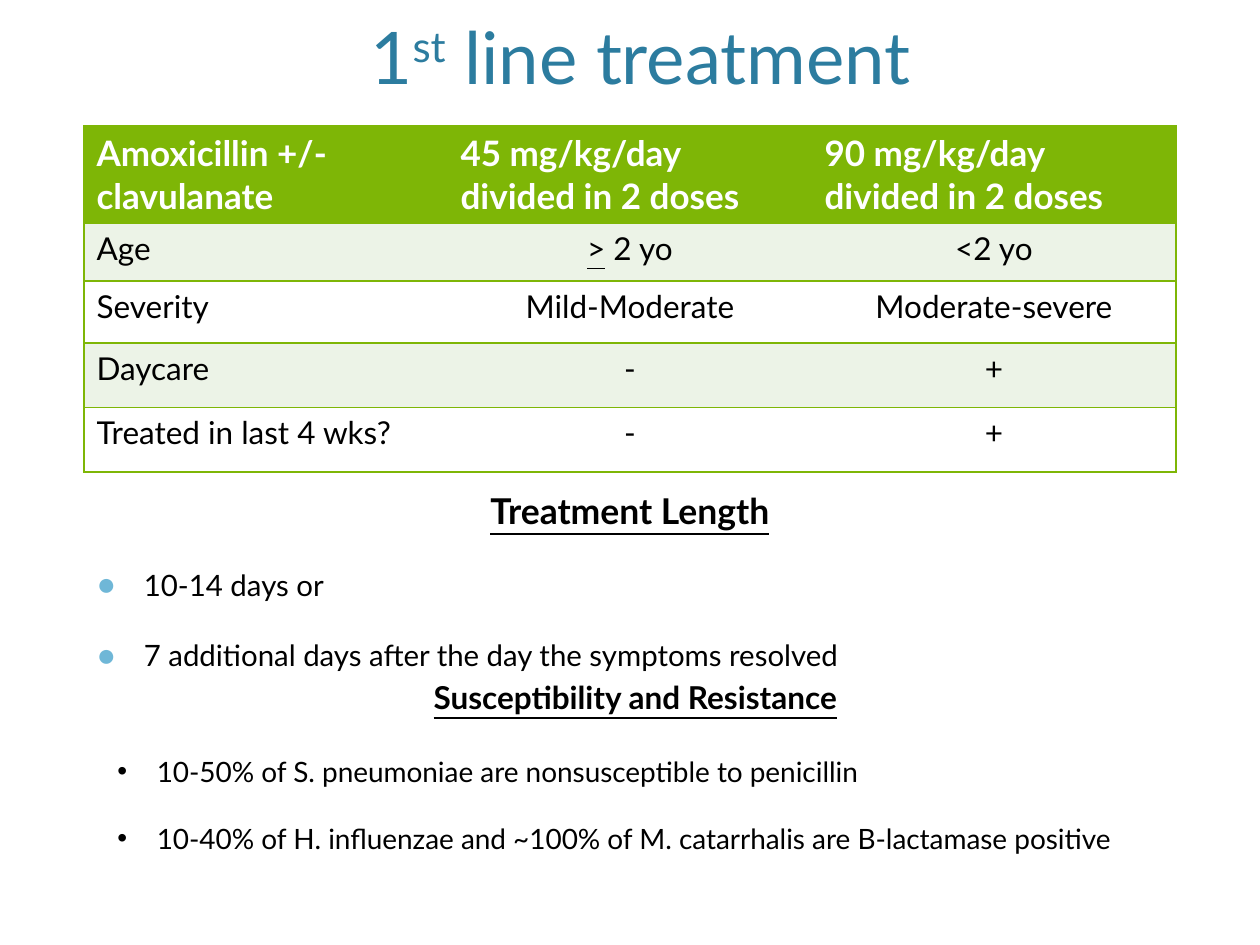
from lxml.etree import SubElement
from pptx import Presentation
from pptx.dml.color import RGBColor
from pptx.enum.text import MSO_ANCHOR, MSO_AUTO_SIZE, PP_ALIGN
from pptx.oxml.ns import qn
from pptx.util import Pt

COLORS = {
    "title": "2C7C9F",
    "text": "000000",
    "white": "FFFFFF",
    "green": "7EB606",
    "band": "ECF3E7",
    "bullet": "6FB7D7",
}
HEADERS = ["Amoxicillin +/- clavulanate", "45 mg/kg/day divided in 2 doses",
           "90 mg/kg/day divided in 2 doses"]
ROWS = [
    ["Age", "> 2 yo", "<2 yo"],
    ["Severity", "Mild-Moderate", "Moderate-severe"],
    ["Daycare", "-", "+"],
    ["Treated in last 4 wks?", "-", "+"],
]
ROW_HEIGHTS = [55.4, 33.2, 35.4, 36.8, 36.8]
COLUMN_WIDTH = 208
LENGTH_ITEMS = ["10-14 days or", "7 additional days after the day the symptoms resolved"]
RESISTANCE_ITEMS = [
    "10-50% of S. pneumoniae are nonsusceptible to penicillin",
    "10-40% of H. influenzae and ~100% of M. catarrhalis are B-lactamase positive",
]


def set_all(target, values):
    for name, value in values.items():
        setattr(target, name, value)


def place(box, left, top, width, height):
    set_all(box, {"left": Pt(left), "top": Pt(top), "width": Pt(width), "height": Pt(height)})


def add_span(para, text, size, color="text", **formats):
    span = para.add_run()
    span.text = text
    set_all(span.font, {"name": "Lato", "size": Pt(size), **formats})
    span.font.color.rgb = RGBColor.from_string(COLORS[color])
    return span


def add_para(frame, text, size, before=0, **formats):
    para = frame.paragraphs[0]
    if para.runs:
        para = frame.add_paragraph()
    para.space_before = Pt(before)
    add_span(para, text, size, **formats)
    return para


def add_heading(frame, text, size, before=0):
    para = add_para(frame, text, size, before, bold=True, underline=True)
    para.alignment = PP_ALIGN.CENTER
    properties = para._p.get_or_add_pPr()
    properties.set("marL", "0")
    properties.set("indent", "0")
    SubElement(properties, qn("a:buNone"))


def add_bullet(frame, text, size, before, indent, mark, color, percent):
    para = add_para(frame, text, size, before)
    properties = para._p.get_or_add_pPr()
    properties.set("marL", str(Pt(indent)))
    properties.set("indent", str(-Pt(indent)))
    bullet_color = SubElement(properties, qn("a:buClr"))
    SubElement(bullet_color, qn("a:srgbClr"), val=COLORS[color])
    SubElement(properties, qn("a:buSzPct"), val=str(percent * 1000))
    SubElement(properties, qn("a:buFont"), typeface="Arial")
    SubElement(properties, qn("a:buChar"), char=mark)


def set_borders(cell, visible):
    properties = cell._tc.get_or_add_tcPr()
    for index, side in enumerate(("lnL", "lnR", "lnT", "lnB")):
        line = properties.makeelement(qn(f"a:{side}"), {"w": str(Pt(1))})
        if side in visible:
            fill = SubElement(line, qn("a:solidFill"))
            SubElement(fill, qn("a:srgbClr"), val=COLORS["green"])
        else:
            SubElement(line, qn("a:noFill"))
        properties.insert(index, line)


def fill_cell(cell, text, row, column):
    para = cell.text_frame.paragraphs[0]
    cell.fill.solid()
    if row == 0:
        fill = "green"
        add_span(para, text, 20, "white", bold=True)
    else:
        fill = "band" if row % 2 else "white"
        para.alignment = PP_ALIGN.CENTER if column else PP_ALIGN.LEFT
        if text.startswith(">"):
            add_span(para, text[0], 18, bold=False, underline=True)
            text = text[1:]
        add_span(para, text, 18, bold=False)
    cell.fill.fore_color.rgb = RGBColor.from_string(COLORS[fill])
    outer = {0: ["lnL"], len(HEADERS) - 1: ["lnR"]}
    set_borders(cell, ["lnT", "lnB"] + outer.get(column, []))


def add_dose_table(page):
    content = [HEADERS] + ROWS
    width = COLUMN_WIDTH * len(HEADERS)
    table = page.shapes.add_table(len(content), len(HEADERS), Pt(48), Pt(72),
                                  Pt(width), Pt(sum(ROW_HEIGHTS))).table
    set_all(table, {"first_row": True, "horz_banding": False})
    for column in table.columns:
        column.width = Pt(COLUMN_WIDTH)
    for row, (texts, height) in enumerate(zip(content, ROW_HEIGHTS)):
        table.rows[row].height = Pt(height)
        for column, text in enumerate(texts):
            fill_cell(table.cell(row, column), text, row, column)


def fill_title(box):
    place(box, 42, 0, 648, 60)
    set_all(box.text_frame, {"auto_size": MSO_AUTO_SIZE.NONE,
                             "vertical_anchor": MSO_ANCHOR.BOTTOM})
    para = box.text_frame.paragraphs[0]
    para.alignment = PP_ALIGN.CENTER
    add_span(para, "1", 41.4, "title")
    ordinal = add_span(para, "st", 41.4, "title")
    ordinal._r.get_or_add_rPr().set("baseline", "30000")
    add_span(para, " line treatment", 41.4, "title")


def fill_length(box):
    place(box, 48, 276, 624, 102)
    frame = box.text_frame
    frame.auto_size = MSO_AUTO_SIZE.NONE
    add_heading(frame, "Treatment Length", 20.3, 20)
    for text in LENGTH_ITEMS:
        add_bullet(frame, text, 16.8, 20, 27, "●", "bullet", 110)


def add_resistance(page):
    box = page.shapes.add_textbox(Pt(60), Pt(384), Pt(606), Pt(131))
    frame = box.text_frame
    frame.word_wrap = True
    add_heading(frame, "Susceptibility and Resistance", 18)
    for text, gap in zip(RESISTANCE_ITEMS, (22, 19)):
        add_bullet(frame, text, 16, gap, 22.5, "•", "text", 100)


def main():
    deck = Presentation()
    set_all(deck, {"slide_width": Pt(720), "slide_height": Pt(540)})
    page = deck.slides.add_slide(deck.slide_layouts[1])
    fill_title(page.shapes.title)
    fill_length(page.placeholders[1])
    add_dose_table(page)
    add_resistance(page)
    deck.save("out.pptx")


if __name__ == "__main__":
    main()
